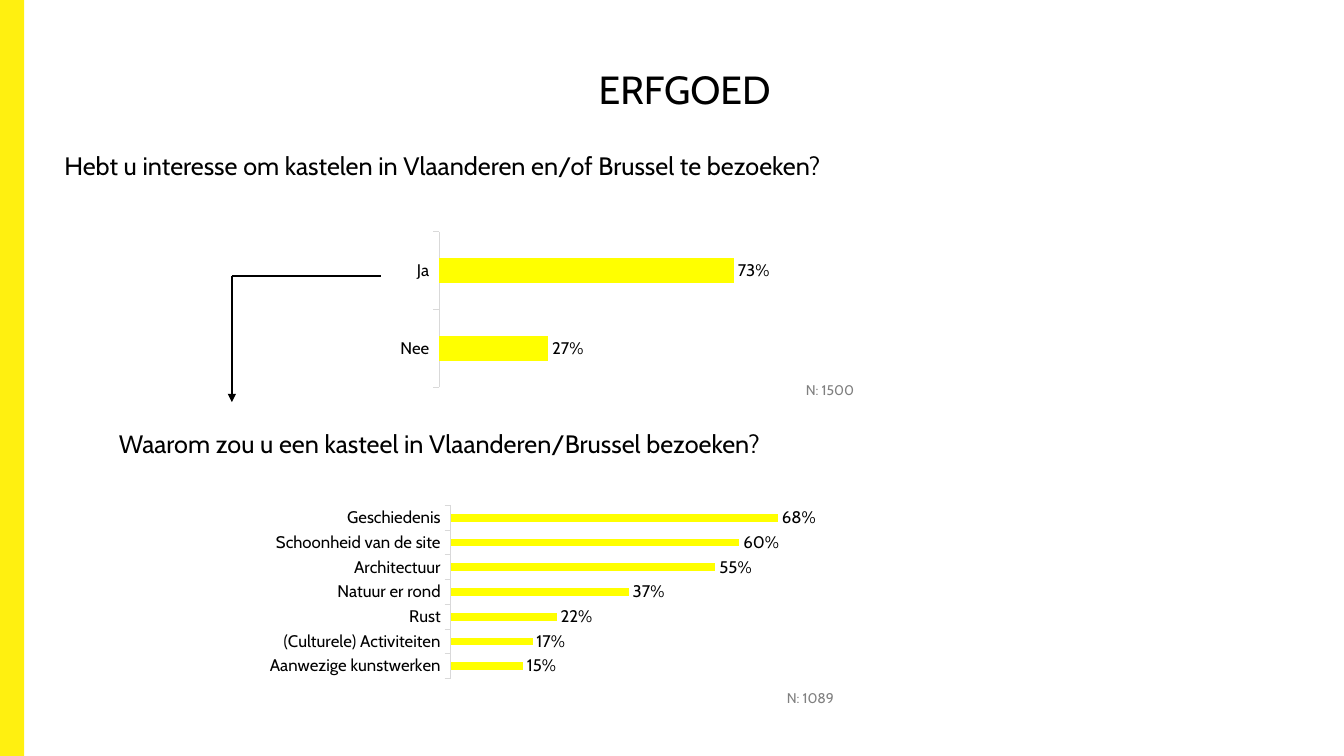
from dataclasses import dataclass
from lxml import etree
from pptx import Presentation, util as u
from pptx.chart.data import CategoryChartData
from pptx.dml.color import RGBColor
from pptx.enum import chart as ch, shapes, text
from pptx.oxml import ns

WIDTH, HEIGHT = 13.33, 7.5
TITLE = ("ERFGOED", (0.24, 0.6, 13.1, 1.25))
QUESTIONS = [
    ("Hebt u interesse om kastelen in Vlaanderen en/of Brussel te bezoeken?",
     (0.54, 1.44, 12.25, 1.9)),
    ("Waarom zou u een kasteel in Vlaanderen/Brussel bezoeken?",
     (1.08, 4.2, 12.25, 1.9)),
]
SAMPLES = [
    ("N: 1500", (4.76, 3.74, 3.81, 0.53)),
    ("N: 1089", (4.56, 6.79, 3.81, 0.53)),
]
CHARTS = [
    ({"Ja": 0.73, "Nee": 0.27}, (1.64, 2.25, 7.99, 1.71)),
    ({"Geschiedenis": 0.68, "Schoonheid van de site": 0.6,
      "Architectuur": 0.55, "Natuur er rond": 0.37, "Rust": 0.22,
      "(Culturele) Activiteiten": 0.17, "Aanwezige kunstwerken": 0.15},
     (1.23, 4.96, 9.53, 1.9)),
]
PLOT = {"x": 0.34, "y": 0.029, "w": 0.501, "h": 0.904}
PERCENT = "###0%"
CORNER = (2.3, 2.74)
ARROW_TIP, BRANCH_END = (2.3, 3.99), (3.78, 2.74)


@dataclass(frozen=True)
class Theme:
    font: str = "Cabin"
    ink: RGBColor = RGBColor(0, 0, 0)
    muted: RGBColor = RGBColor(0x80, 0x80, 0x80)
    axis: RGBColor = RGBColor(0xD9, 0xD9, 0xD9)
    bar: RGBColor = RGBColor(0xFF, 0xFF, 0x00)
    band: RGBColor = RGBColor(0xFF, 0xF0, 0x10)
    title: int = 28
    question: int = 18
    label: int = 12
    sample: int = 10


THEME = Theme()


def inches(values):
    return [u.Inches(value) for value in values]


def style(font, size, color):
    font.name, font.size, font.bold = THEME.font, u.Pt(size), False
    font.color.rgb = color


def write(box, words, size, color, align):
    frame = box.text_frame
    frame.word_wrap = True
    frame.auto_size = text.MSO_AUTO_SIZE.NONE
    frame.vertical_anchor = text.MSO_ANCHOR.TOP
    para = frame.paragraphs[0]
    para.alignment = align
    span = para.add_run()
    span.text = words
    style(span.font, size, color)


def add_text(page, words, area, size, color, align):
    write(page.shapes.add_textbox(*inches(area)), words, size, color, align)


def place_plot(chart):
    plot_area = chart.plots[0]._element.getparent()
    for old in plot_area.findall(ns.qn("c:layout")):
        plot_area.remove(old)
    layout = etree.Element(ns.qn("c:layout"))
    manual = etree.SubElement(layout, ns.qn("c:manualLayout"))
    settings = {"layoutTarget": "inner", "xMode": "edge", "yMode": "edge", **PLOT}
    for name, value in settings.items():
        etree.SubElement(manual, ns.qn(f"c:{name}")).set("val", str(value))
    plot_area.insert(0, layout)


def add_bars(page, shares, area):
    data = CategoryChartData(number_format=PERCENT)
    data.categories = list(shares)
    data.add_series("Series 1", list(shares.values()))
    chart = page.shapes.add_chart(
        ch.XL_CHART_TYPE.BAR_CLUSTERED, *inches(area), data).chart
    chart.has_legend = chart.has_title = False
    style(chart.font, THEME.label, THEME.ink)

    categories, values = chart.category_axis, chart.value_axis
    categories.reverse_order = True
    categories.has_major_gridlines = False
    categories.major_tick_mark = ch.XL_TICK_MARK.OUTSIDE
    categories.minor_tick_mark = ch.XL_TICK_MARK.NONE
    categories.format.line.color.rgb = THEME.axis
    categories.format.line.width = u.Pt(0.75)
    style(categories.tick_labels.font, THEME.label, THEME.ink)
    values.minimum_scale, values.maximum_scale = 0, 1
    values.has_major_gridlines = False
    values.visible = False

    plot = chart.plots[0]
    plot.gap_width = 219
    plot.vary_by_categories = False
    plot.has_data_labels = True
    labels = plot.data_labels
    labels.show_value = True
    labels.number_format, labels.number_format_is_linked = PERCENT, False
    labels.position = ch.XL_LABEL_POSITION.OUTSIDE_END
    style(labels.font, THEME.label, THEME.ink)
    fill = plot.series[0].format.fill
    fill.solid()
    fill.fore_color.rgb = THEME.bar
    place_plot(chart)


def add_line(page, start, end, arrow=False):
    line = page.shapes.add_connector(
        shapes.MSO_CONNECTOR.STRAIGHT, *inches(start + end))
    line.line.color.rgb = THEME.ink
    line.line.width = u.Pt(1.5)
    properties = line._element.spPr
    etree.SubElement(properties, ns.qn("a:effectLst"))
    if arrow:
        outline = properties.find(ns.qn("a:ln"))
        etree.SubElement(outline, ns.qn("a:tailEnd")).set("type", "triangle")


def main():
    deck = Presentation()
    deck.slide_width, deck.slide_height = inches((WIDTH, HEIGHT))
    page = deck.slides.add_slide(deck.slide_layouts.get_by_name("Title Only"))

    band = page.shapes.add_shape(
        shapes.MSO_SHAPE.RECTANGLE, *inches((0, 0, 0.24, HEIGHT)))
    band.shadow.inherit = False
    band.fill.solid()
    band.fill.fore_color.rgb = THEME.band
    band.line.fill.background()

    words, area = TITLE
    title = page.shapes.title
    title.left, title.top, title.width, title.height = inches(area)
    write(title, words, THEME.title, THEME.ink, text.PP_ALIGN.CENTER)

    for shares, area in CHARTS:
        add_bars(page, shares, area)
    for words, area in QUESTIONS:
        add_text(page, words, area, THEME.question, THEME.ink, text.PP_ALIGN.LEFT)
    for words, area in SAMPLES:
        add_text(page, words, area, THEME.sample, THEME.muted, text.PP_ALIGN.RIGHT)
    add_line(page, CORNER, ARROW_TIP, arrow=True)
    add_line(page, CORNER, BRANCH_END)

    deck.save("out.pptx")


if __name__ == "__main__":
    main()
